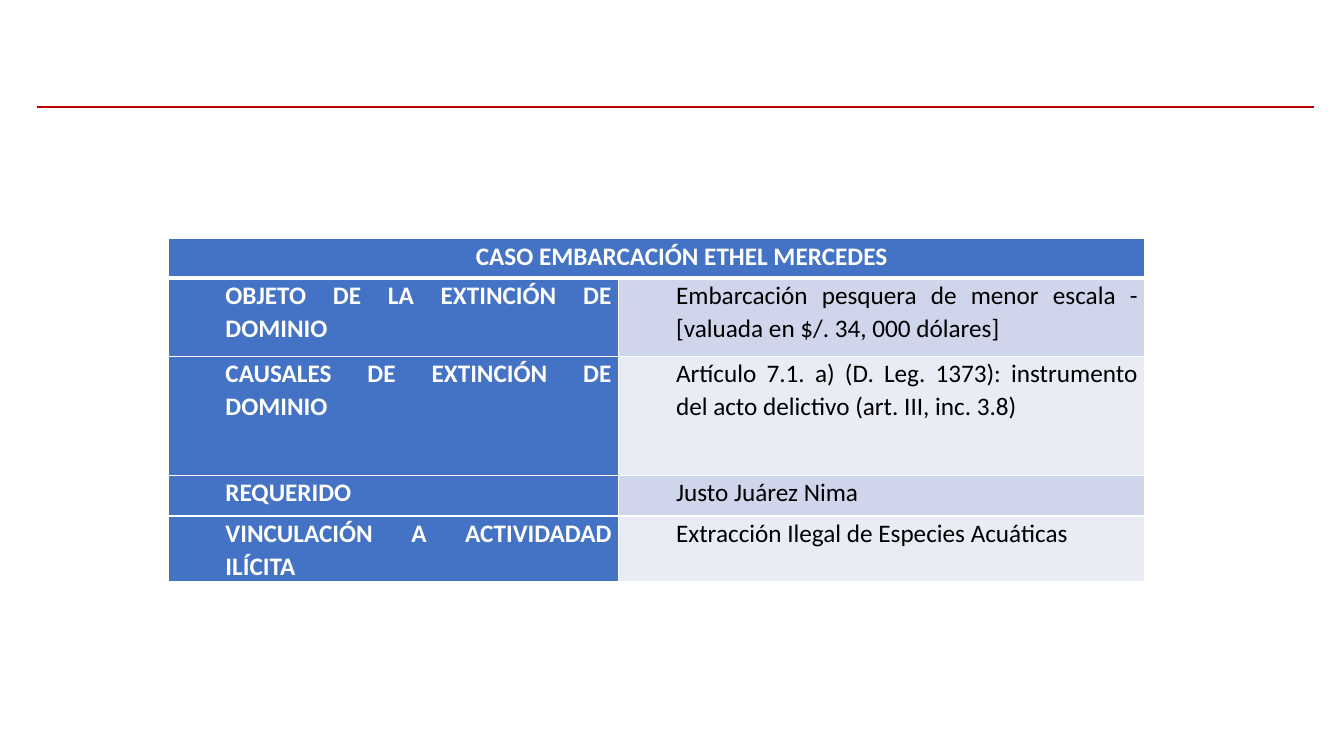
from lxml.etree import SubElement
from pptx import Presentation
from pptx.dml.color import RGBColor
from pptx.enum.shapes import MSO_CONNECTOR
from pptx.enum.text import PP_ALIGN
from pptx.oxml.ns import qn
from pptx.util import Inches, Pt

WIDE, HIGH = 13.33, 7.5
BLUE, WHITE, BLACK, RED = "4472C4", "FFFFFF", "000000", "C00000"
BANDS = ["CFD5EA", "E9EBF5"]
COLS = [4.47, 5.22]
ROWS = [0.39, 0.78, 1.18, 0.4, 0.42]
HEAD = "CASO EMBARCACIÓN ETHEL MERCEDES"
FACTS = [
    ("OBJETO DE LA EXTINCIÓN DE DOMINIO",
     "Embarcación pesquera de menor escala - [valuada en $/. 34, 000 dólares]"),
    ("CAUSALES DE EXTINCIÓN DE DOMINIO",
     "Artículo 7.1. a) (D. Leg. 1373): instrumento del acto delictivo (art. III, inc. 3.8)"),
    ("REQUERIDO", "Justo Juárez Nima"),
    ("VINCULACIÓN A ACTIVIDADAD ILÍCITA", "Extracción Ilegal de Especies Acuáticas"),
]


def tint(code):
    return RGBColor.from_string(code)


def edge(cell, top, low):
    props = cell._tc.get_or_add_tcPr()
    for side, size in (("L", 1), ("R", 1), ("T", top), ("B", low)):
        line = SubElement(props, qn("a:ln" + side), w=str(Pt(size)))
        fill = SubElement(line, qn("a:solidFill"))
        SubElement(fill, qn("a:srgbClr"), val=WHITE)


def paint(cell, code):
    cell.fill.solid()
    cell.fill.fore_color.rgb = tint(code)


def write(cell, text, code, bold, align, after):
    cell.margin_left = cell.margin_right = Inches(0.07)
    cell.margin_top = cell.margin_bottom = 0
    para = cell.text_frame.paragraphs[0]
    para.alignment = align
    para.line_spacing = 1.07
    para.space_after = Pt(after)
    props = para._p.get_or_add_pPr()
    props.set("marL", str(Inches(0.5)))
    props.set("indent", "0")
    run = para.add_run()
    run.text = text
    run.font.name = "Calibri"
    run.font.size = Pt(18)
    run.font.bold = bold
    run.font.color.rgb = tint(code)


def add_rule(slide, left, top, width):
    rule = slide.shapes.add_connector(
        MSO_CONNECTOR.STRAIGHT, Inches(left), Inches(top), Inches(left + width), Inches(top))
    rule.line.color.rgb = tint(RED)
    rule.line.width = Pt(1.5)
    SubElement(rule._element.spPr, qn("a:effectLst"))


def add_case(slide, left, top, width, height):
    grid = slide.shapes.add_table(
        len(ROWS), len(COLS), Inches(left), Inches(top), Inches(width), Inches(height)).table
    for col, share in zip(grid.columns, COLS):
        col.width = Inches(width * share / sum(COLS))
    for row, size in zip(grid.rows, ROWS):
        row.height = Inches(height * size / sum(ROWS))
    for i in range(len(ROWS)):
        for cell in grid.rows[i].cells:
            edge(cell, 3 if i == 1 else 1, 3 if i == 0 else 1)
            paint(cell, BLUE)
    title = grid.cell(0, 0)
    title.merge(grid.cell(0, 1))
    write(title, HEAD, WHITE, True, PP_ALIGN.CENTER, 8)
    for i, (label, fact) in enumerate(FACTS, 1):
        write(grid.cell(i, 0), label, WHITE, True, PP_ALIGN.JUSTIFY, 0)
        write(grid.cell(i, 1), fact, BLACK, False, PP_ALIGN.JUSTIFY, 8)
        paint(grid.cell(i, 1), BANDS[(i - 1) % 2])


def main():
    deck = Presentation()
    deck.slide_width, deck.slide_height = Inches(WIDE), Inches(HIGH)
    slide = deck.slides.add_slide(deck.slide_layouts[6])
    add_rule(slide, 0.37, 1.06, WIDE * 0.95)
    add_case(slide, WIDE / 8, 2.37, sum(COLS), sum(ROWS))
    deck.save("out.pptx")


if __name__ == "__main__":
    main()
